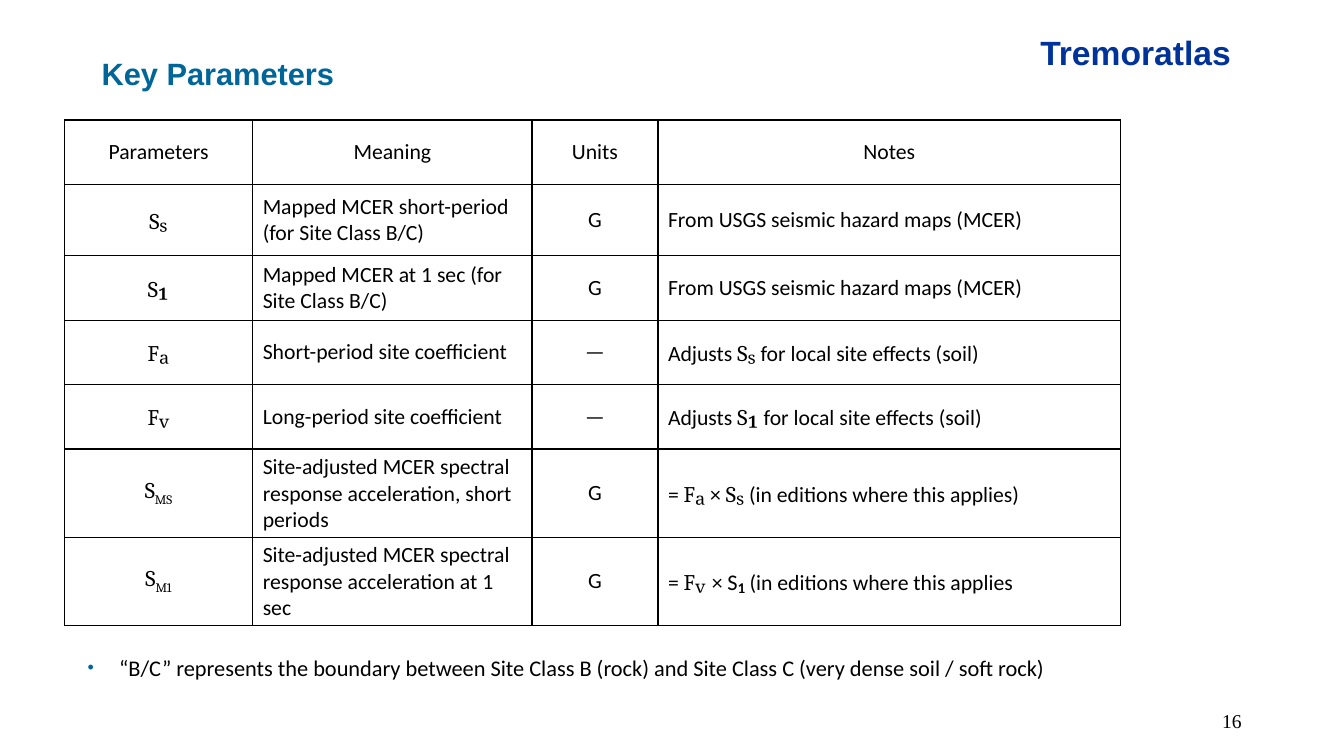
import pptx
import pptx.dml.color
import pptx.enum.text
import pptx.oxml
import pptx.oxml.ns
import pptx.util

Pt = pptx.util.Pt
ALIGN = pptx.enum.text.PP_ALIGN
ANCHOR = pptx.enum.text.MSO_ANCHOR
AUTO_SIZE = pptx.enum.text.MSO_AUTO_SIZE

COLORS = {
    "black": "000000",
    "number": "010000",
    "brand": "003399",
    "title": "006699",
    "white": "FFFFFF",
}

# Each style: font attributes
STYLES = {
    "body": {"name": "Calibri", "size": Pt(15.5)},
    "symbol": {"name": "Cambria", "size": Pt(16)},
    "index": {"name": "Cambria", "size": Pt(20)},
    "lowered": {"name": "Cambria", "size": Pt(16)},
    "plain symbol": {"name": "Calibri", "size": Pt(16)},
    "plain index": {"name": "Calibri", "size": Pt(20)},
    "bullet": {"name": "Calibri", "size": Pt(16)},
    "brand": {"name": "Arial", "size": Pt(24), "bold": True},
    "title": {"name": "Arial", "size": Pt(22), "bold": True},
    "number": {"name": "Times New Roman", "size": Pt(14)},
}

S_SHORT = [("S", "symbol"), ("ₛ", "index")]
S_ONE = [("S", "symbol"), ("₁", "index")]
F_A = [("F", "symbol"), ("ₐ", "index")]
F_V = [("F", "symbol"), ("ᵥ", "index")]
S_MS = [("S", "symbol"), ("MS", "lowered")]
S_M1 = [("S", "symbol"), ("M1", "lowered")]
S_ONE_PLAIN = [("S", "plain symbol"), ("₁", "plain index")]


def body(text):
    return [(text, "body")]


HAZARD_MAPS = body("From USGS seismic hazard maps (MCER)")
SOIL = body(" for local site effects (soil)")

HEADINGS = [body(text) for text in ("Parameters", "Meaning", "Units", "Notes")]
# Symbol, meaning, units, notes
PARAMETERS = [
    (S_SHORT, "Mapped MCER short-period (for Site Class B/C)", "G", HAZARD_MAPS),
    (S_ONE, "Mapped MCER at 1 sec (for Site Class B/C)", "G", HAZARD_MAPS),
    (F_A, "Short-period site coefficient", "—", body("Adjusts ") + S_SHORT + SOIL),
    (F_V, "Long-period site coefficient", "—", body("Adjusts ") + S_ONE + SOIL),
    (S_MS, "Site-adjusted MCER spectral response acceleration, short periods", "G",
     body("= ") + F_A + body(" × ") + S_SHORT
     + body(" (in editions where this applies)")),
    (S_M1, "Site-adjusted MCER spectral response acceleration at 1 sec", "G",
     body("= ") + F_V + [(" ", "index")] + body("× ") + S_ONE_PLAIN
     + body(" (in editions where this applies")),
]
COLUMN_WIDTHS = [134.5, 199.5, 90, 330.5]
ROW_HEIGHTS = [46, 51, 46, 46, 46, 63, 63]


def rgb(color):
    return pptx.dml.color.RGBColor.from_string(COLORS[color])


def add_runs(paragraph, runs, color="black"):
    for text, style in runs:
        run = paragraph.add_run()
        run.text = text
        for attribute, value in STYLES[style].items():
            setattr(run.font, attribute, value)
        run.font.color.rgb = rgb(color)
        if style == "lowered":
            run.font._element.set("baseline", "-25000")


def add_text(slide, box, runs, color, wrap=True, **frame_format):
    """Add a text box and return its paragraph."""
    shape = slide.shapes.add_textbox(*map(Pt, box))
    frame = shape.text_frame
    frame.word_wrap = wrap
    for attribute, value in frame_format.items():
        setattr(frame, attribute, value)
    paragraph = frame.paragraphs[0]
    add_runs(paragraph, runs, color)
    return paragraph


def add_bullet(paragraph):
    properties = paragraph._p.get_or_add_pPr()
    properties.set("marL", str(Pt(22.5)))
    properties.set("indent", str(-Pt(22.5)))
    namespace = pptx.oxml.ns.nsdecls("a")
    for xml in (
        f'<a:buClr {namespace}><a:srgbClr val="{COLORS["title"]}"/></a:buClr>',
        f'<a:buSzPct {namespace} val="80000"/>',
        f'<a:buFont {namespace} typeface="Arial"/>',
        f'<a:buChar {namespace} char="•"/>',
    ):
        properties.append(pptx.oxml.parse_xml(xml))


def add_borders(cell):
    properties = cell._tc.get_or_add_tcPr()
    for side in "LRTB":
        properties.append(pptx.oxml.parse_xml(
            f'<a:ln{side} {pptx.oxml.ns.nsdecls("a")} w="{Pt(1)}"><a:solidFill>'
            f'<a:srgbClr val="{COLORS["black"]}"/></a:solidFill></a:ln{side}>'))


def fill_cell(cell, runs, centered):
    add_borders(cell)
    cell.fill.solid()
    cell.fill.fore_color.rgb = rgb("white")
    cell.vertical_anchor = ANCHOR.MIDDLE
    paragraph = cell.text_frame.paragraphs[0]
    paragraph.alignment = ALIGN.CENTER if centered else ALIGN.LEFT
    add_runs(paragraph, runs)


def add_parameter_table(slide):
    rows = [HEADINGS] + [
        [symbol, body(meaning), body(units), notes]
        for symbol, meaning, units, notes in PARAMETERS
    ]
    table = slide.shapes.add_table(
        len(rows), len(COLUMN_WIDTHS), Pt(46), Pt(85.75),
        Pt(sum(COLUMN_WIDTHS)), Pt(sum(ROW_HEIGHTS))).table
    table.first_row = False
    table.horz_banding = False
    for column, width in zip(table.columns, COLUMN_WIDTHS):
        column.width = Pt(width)
    for row, height in zip(table.rows, ROW_HEIGHTS):
        row.height = Pt(height)
    for row_index, contents in enumerate(rows):
        for column_index, runs in enumerate(contents):
            centered = row_index == 0 or column_index in (0, 2)
            fill_cell(table.cell(row_index, column_index), runs, centered)


def main():
    presentation = pptx.Presentation()
    presentation.slide_width = Pt(960)
    presentation.slide_height = Pt(540)
    slide = presentation.slides.add_slide(presentation.slide_layouts[6])

    number = add_text(slide, (678, 500.5, 216, 29), [("16", "number")], "number",
                      vertical_anchor=ANCHOR.MIDDLE)
    number.alignment = ALIGN.RIGHT
    fit = {"auto_size": AUTO_SIZE.SHAPE_TO_FIT_TEXT}
    add_text(slide, (736, 19.5, 169, 36), [("Tremoratlas", "brand")], "brand",
             wrap=False, **fit)
    add_text(slide, (65.5, 35.5, 182, 34), [("Key Parameters", "title")], "title", **fit)
    add_parameter_table(slide)
    note = add_text(
        slide, (55.5, 463.5, 745, 26.5),
        [("“B/C” represents the boundary between Site Class B (rock) and "
          "Site Class C (very dense soil / soft rock)", "bullet")], "black", **fit)
    add_bullet(note)

    presentation.save("out.pptx")


if __name__ == "__main__":
    main()
